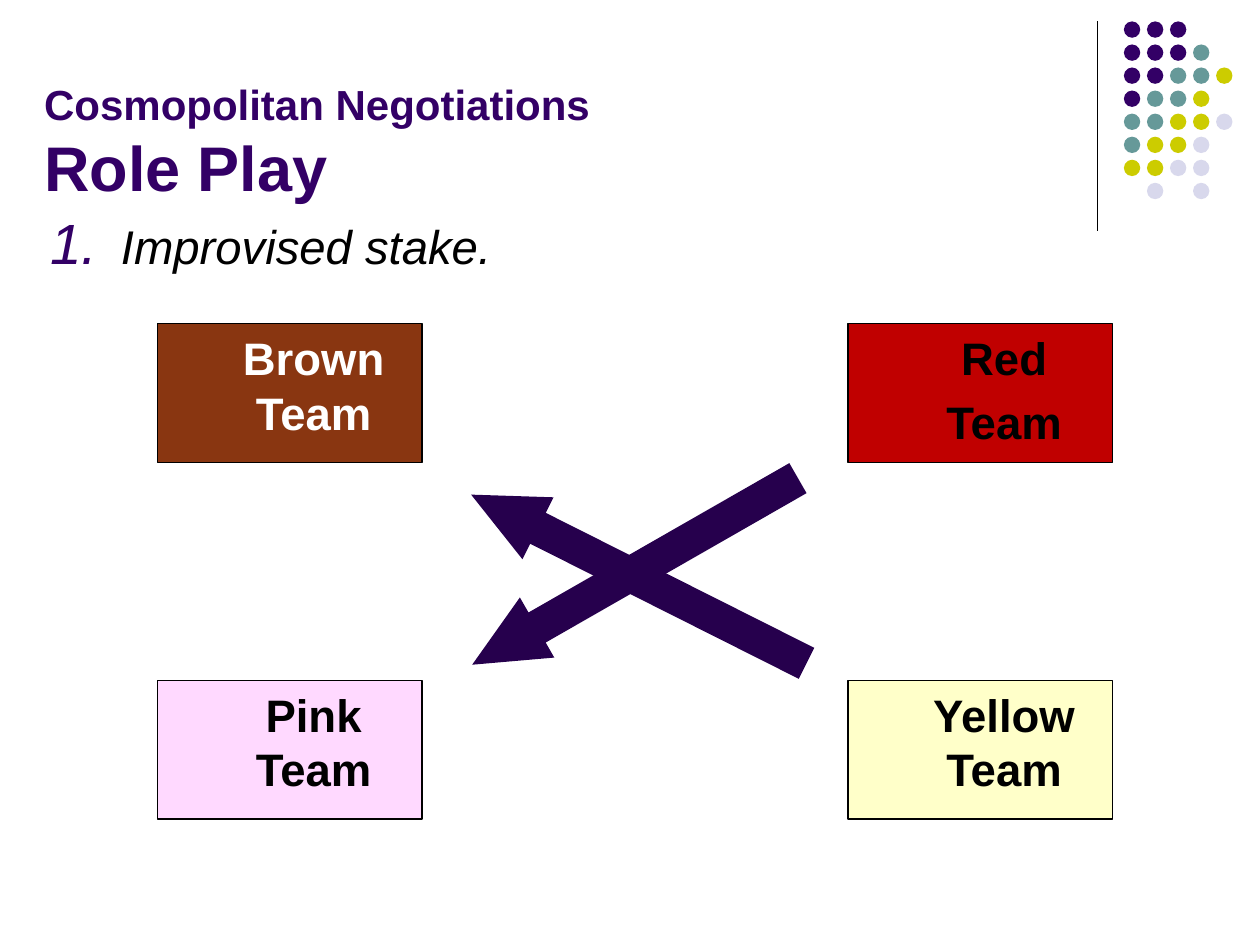
from lxml.etree import SubElement
from pptx import Presentation
from pptx.dml.color import RGBColor
from pptx.enum.shapes import MSO_CONNECTOR, MSO_SHAPE
from pptx.enum.text import MSO_ANCHOR, PP_ALIGN
from pptx.oxml.ns import qn
from pptx.util import Inches, Pt

PURPLE = RGBColor(0x33, 0x00, 0x66)
TEAL = RGBColor(0x66, 0x99, 0x99)
OLIVE = RGBColor(0xCC, 0xCC, 0x00)
LILAC = RGBColor(0xD8, 0xD8, 0xEC)
BLACK = RGBColor(0x00, 0x00, 0x00)
WHITE = RGBColor(0xFF, 0xFF, 0xFF)
BROWN = RGBColor(0x89, 0x36, 0x11)
PINK = RGBColor(0xFF, 0xD9, 0xFF)
RED = RGBColor(0xC0, 0x00, 0x00)
YELLOW = RGBColor(0xFF, 0xFF, 0xC9)
ARROW = RGBColor(0x26, 0x00, 0x4D)

# Content
TITLE = [("Cosmopolitan Negotiations", 24), ("Role Play", 36)]
STAKE = "Improvised stake."
TEAMS = [  # column, row, text, fill, text colour
    (0, 0, "Brown Team", BROWN, WHITE),
    (0, 1, "Pink\vTeam", PINK, BLACK),
    (1, 0, "Red\nTeam", RED, BLACK),
    (1, 1, "Yellow Team", YELLOW, BLACK),
]
COLUMNS, ROWS = (1.25, 6.73), (2.57, 5.4)
ARROWS = [(3.55, 4.26, 150.2), (3.58, 4.32, 206.7)]  # left, top, rotation
DOTS = ["PPP", "PPPT", "PPTTO", "PTTO", "TTOOL", "TOOL", "OOLL", " L L"]
DOT_COLOURS = {"P": PURPLE, "T": TEAL, "O": OLIVE, "L": LILAC}
DOT_LEFT, DOT_TOP, DOT_STEP, DOT_SIZE = 8.92, 0.17, 0.183, 0.13


def place(shape, *box):
    shape.left, shape.top, shape.width, shape.height = map(Inches, box)


def add_filled(s, kind, box, fill, line=None):
    sp = s.shapes.add_shape(kind, *map(Inches, box))
    sp.shadow.inherit = False
    sp.fill.solid()
    sp.fill.fore_color.rgb = fill
    if line is None:
        sp.line.fill.background()
    else:
        sp.line.color.rgb = line
        sp.line.width = Pt(0.75)
    return sp


def style(r, size, colour, bold=False, italic=False):
    r.font.name = "Arial"
    r.font.size = Pt(size)
    r.font.color.rgb = colour
    r.font.bold = bold
    r.font.italic = italic


prs = Presentation()
prs.slide_width, prs.slide_height = Inches(10), Inches(7.5)
s = prs.slides.add_slide(prs.slide_layouts[1])

# Corner decoration: rule and dot grid
rule = s.shapes.add_connector(MSO_CONNECTOR.STRAIGHT, Inches(8.71), Inches(0.17),
                              Inches(8.71), Inches(1.83))
rule.line.color.rgb = BLACK
rule.line.width = Pt(0.75)
SubElement(rule._element.spPr, qn("a:effectLst"))
for row, codes in enumerate(DOTS):
    for col, code in enumerate(codes):
        if code in DOT_COLOURS:
            box = (DOT_LEFT + col * DOT_STEP, DOT_TOP + row * DOT_STEP, DOT_SIZE, DOT_SIZE)
            add_filled(s, MSO_SHAPE.OVAL, box, DOT_COLOURS[code])

# Title
title = s.shapes.title
place(title, 0.25, 0.25, 8.42, 1.42)
tf = title.text_frame
tf.text = "\v".join(text for text, _ in TITLE)
tf.vertical_anchor = MSO_ANCHOR.BOTTOM
p = tf.paragraphs[0]
p.alignment = PP_ALIGN.LEFT
for r, (_, size) in zip(p.runs, TITLE):
    style(r, size, PURPLE, bold=True)

# Numbered list
body = s.placeholders[1]
place(body, 0.25, 1.67, 9.75, 4.82)
body.text_frame.text = STAKE
p = body.text_frame.paragraphs[0]
p.space_before = Pt(0)
pPr = p._p.get_or_add_pPr()
pPr.set("marL", str(Inches(0.61)))
pPr.set("indent", str(Inches(-0.56)))
SubElement(SubElement(pPr, qn("a:buClr")), qn("a:srgbClr"), val=str(PURPLE))
SubElement(pPr, qn("a:buSzPct"), val="120000")
SubElement(pPr, qn("a:buFont"), typeface="Arial")
SubElement(pPr, qn("a:buAutoNum"), type="arabicPeriod")
style(p.runs[0], 27, BLACK, italic=True)

# Team boxes
for col, row, text, fill, colour in TEAMS:
    sp = add_filled(s, MSO_SHAPE.RECTANGLE, (COLUMNS[col], ROWS[row], 2.1, 1.1), fill, BLACK)
    tf = sp.text_frame
    tf.text = text
    tf.word_wrap = True
    tf.vertical_anchor = MSO_ANCHOR.TOP
    for i, p in enumerate(tf.paragraphs):
        p.alignment = PP_ALIGN.CENTER
        p.space_before = Pt(5.2 if i else 0)
        p._p.get_or_add_pPr().set("marL", str(Inches(0.38)))
        for r in p.runs:
            style(r, 26, colour, bold=True)

# Crossing arrows
for left, top, rotation in ARROWS:
    arrow = add_filled(s, MSO_SHAPE.RIGHT_ARROW, (left, top, 2.98, 0.55), ARROW)
    arrow.adjustments[0] = 0.5
    arrow.adjustments[1] = 1.08
    arrow.rotation = rotation

prs.save("out.pptx")
